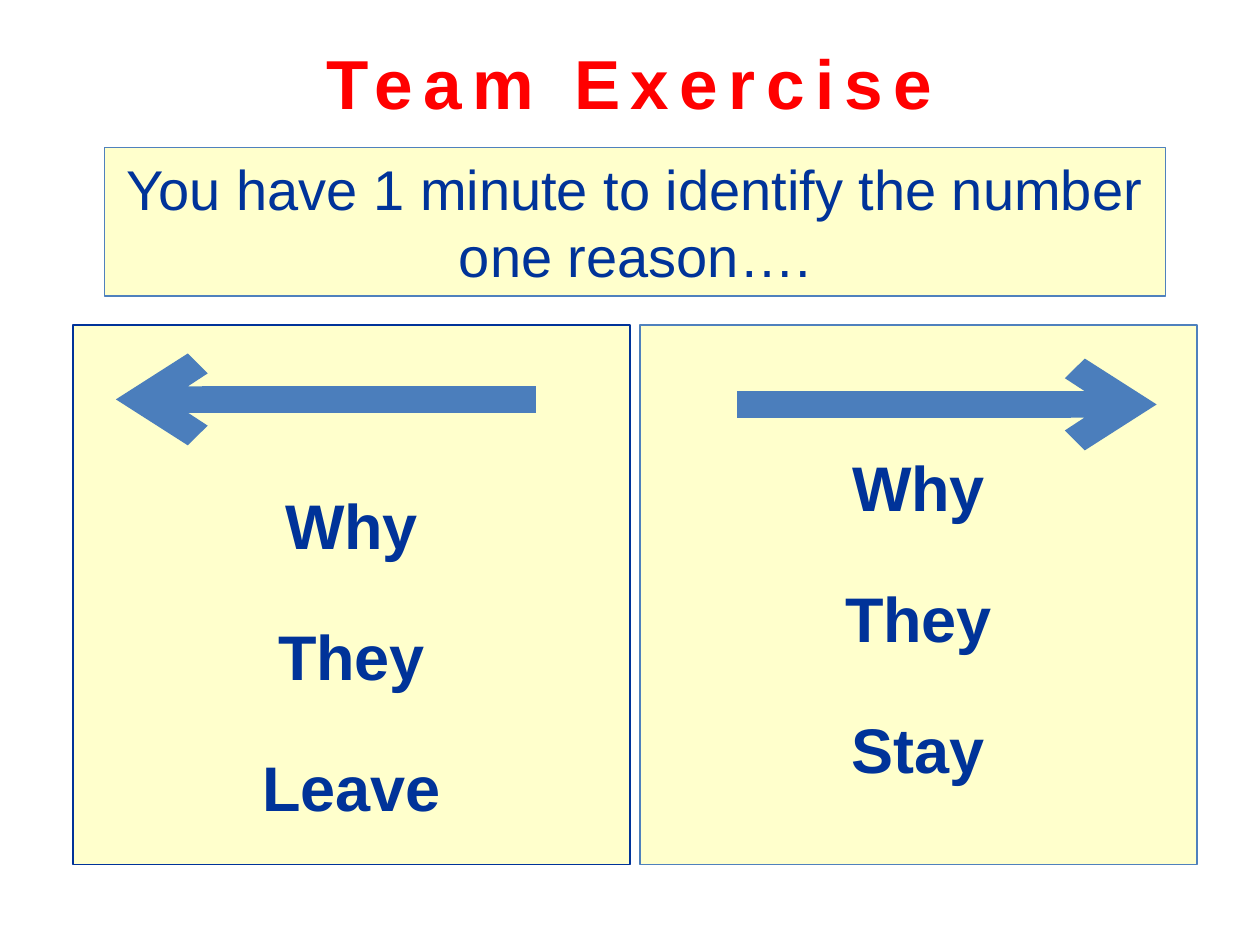
from dataclasses import dataclass

from lxml.etree import SubElement
from pptx import Presentation
from pptx.dml.color import RGBColor
from pptx.enum.shapes import MSO_CONNECTOR, MSO_SHAPE
from pptx.enum.text import MSO_ANCHOR, PP_ALIGN
from pptx.oxml.ns import qn
from pptx.util import Inches, Pt


@dataclass(frozen=True)
class Theme:
    font: str = "Arial"
    red: str = "FF0000"
    navy: str = "003399"
    cream: str = "FFFFCC"
    border: str = "4F81BD"
    arrow: str = "4B7EBC"
    title_size: float = 39.6
    prompt_size: float = 32
    panel_size: float = 36
    border_width: float = 0.75
    arrow_width: float = 15


THEME = Theme()

# Content
TITLE = "Team Exercise"
PROMPT = "You have 1 minute to identify the number one reason…."
PANELS = [
    {"words": ["Why", "They", "Leave"], "border": THEME.navy,
     "bottom_inset": 0.32, "arrow": (4.25, 0.92, 3.17)},
    {"words": ["Why", "They", "Stay"], "border": THEME.border,
     "bottom_inset": 0.62, "arrow": (5.85, 9.18, 3.21)},
]

# Grid, in inches
SLIDE_WIDTH, SLIDE_HEIGHT = 10, 7.5
TITLE_AREA = (0.5, 0.3, 9, 0.7)
PROMPT_AREA = (0.83, 1.17, 8.42, 1.18)
PANEL_LEFT, PANEL_TOP, PANEL_WIDTH, PANEL_HEIGHT = 0.58, 2.58, 4.42, 4.28
PANEL_GAP = 0.08


def color(code):
    return RGBColor.from_string(code)


def format_text(frame, size, code, bold=False):
    frame.word_wrap = True
    for para in frame.paragraphs:
        para.alignment = PP_ALIGN.CENTER
        for span in para.runs:
            span.font.name = THEME.font
            span.font.size = Pt(size)
            span.font.bold = bold
            span.font.color.rgb = color(code)


def add_box(page, area, border):
    box = page.shapes.add_shape(MSO_SHAPE.RECTANGLE, *map(Inches, area))
    box.shadow.inherit = False
    box.fill.solid()
    box.fill.fore_color.rgb = color(THEME.cream)
    box.line.color.rgb = color(border)
    box.line.width = Pt(THEME.border_width)
    return box


def add_title(page):
    title = page.shapes.title
    title.left, title.top, title.width, title.height = map(Inches, TITLE_AREA)
    frame = title.text_frame
    frame.text = TITLE
    frame.vertical_anchor = MSO_ANCHOR.MIDDLE
    format_text(frame, THEME.title_size, THEME.red, bold=True)
    # Letter spacing, in hundredths of a point
    frame.paragraphs[0].runs[0].font._element.set("spc", "600")


def add_panel(page, column, panel):
    left = PANEL_LEFT + column * (PANEL_WIDTH + PANEL_GAP)
    box = add_box(page, (left, PANEL_TOP, PANEL_WIDTH, PANEL_HEIGHT), panel["border"])
    frame = box.text_frame
    frame.text = "\n".join(panel["words"])
    frame.vertical_anchor = MSO_ANCHOR.BOTTOM
    frame.margin_bottom = Inches(panel["bottom_inset"])
    format_text(frame, THEME.panel_size, THEME.navy, bold=True)
    for para in frame.paragraphs:
        para.line_spacing = 1.5
        para.space_before = Pt(10)


def add_arrow(page, start, end, height):
    arrow = page.shapes.add_connector(
        MSO_CONNECTOR.STRAIGHT, Inches(start), Inches(height), Inches(end), Inches(height))
    arrow.line.color.rgb = color(THEME.arrow)
    arrow.line.width = Pt(THEME.arrow_width)
    SubElement(arrow.line._get_or_add_ln(), qn("a:tailEnd"), type="arrow")
    SubElement(arrow._element.spPr, qn("a:effectLst"))


def main():
    deck = Presentation()
    deck.slide_width, deck.slide_height = Inches(SLIDE_WIDTH), Inches(SLIDE_HEIGHT)
    page = deck.slides.add_slide(deck.slide_layouts[5])
    add_title(page)

    # Panels with their arrows on top
    for column, panel in enumerate(PANELS):
        add_panel(page, column, panel)
    for panel in PANELS:
        add_arrow(page, *panel["arrow"])

    # Prompt
    prompt = add_box(page, PROMPT_AREA, THEME.border)
    prompt.text_frame.text = PROMPT
    format_text(prompt.text_frame, THEME.prompt_size, THEME.navy)

    deck.save("out.pptx")


if __name__ == "__main__":
    main()
